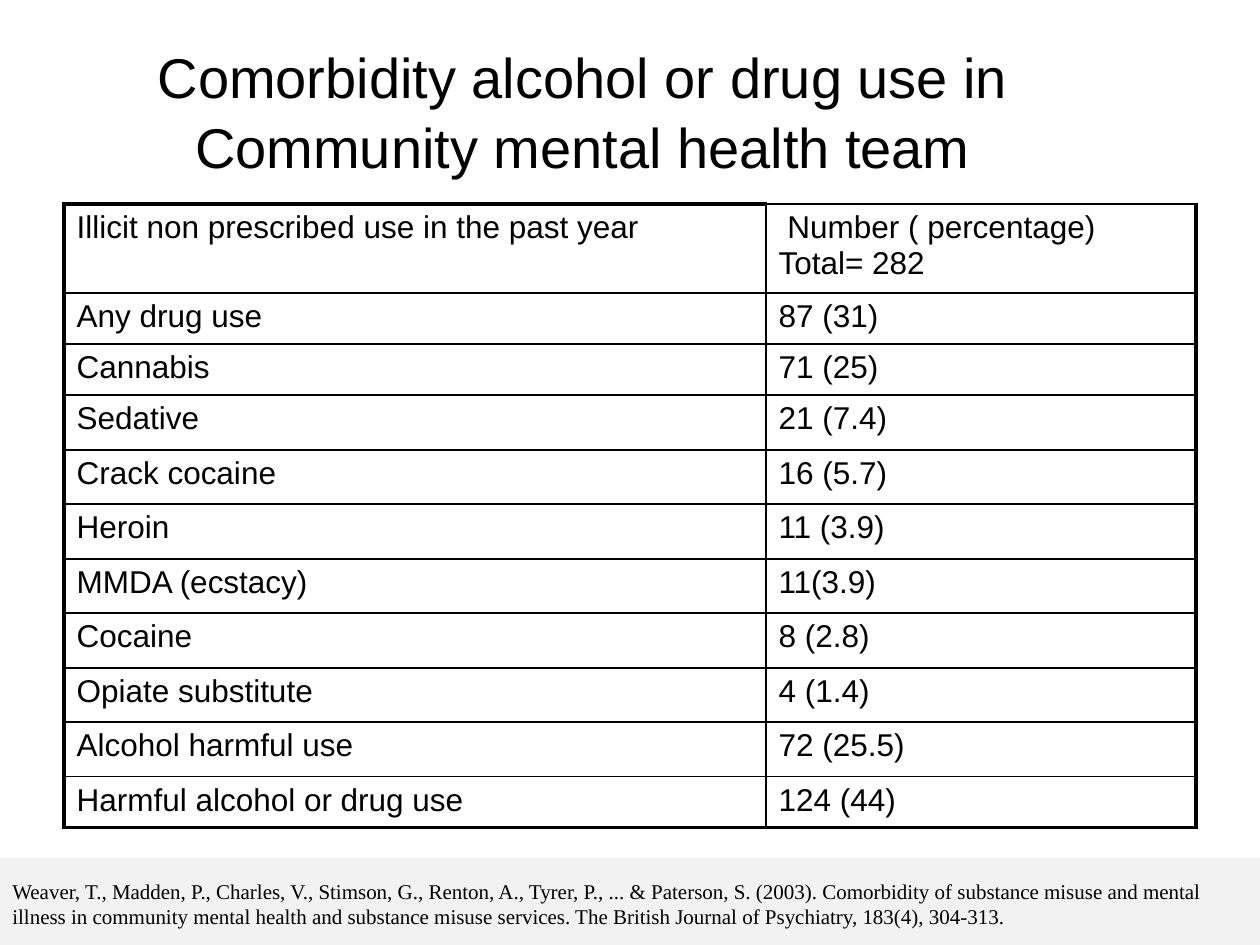
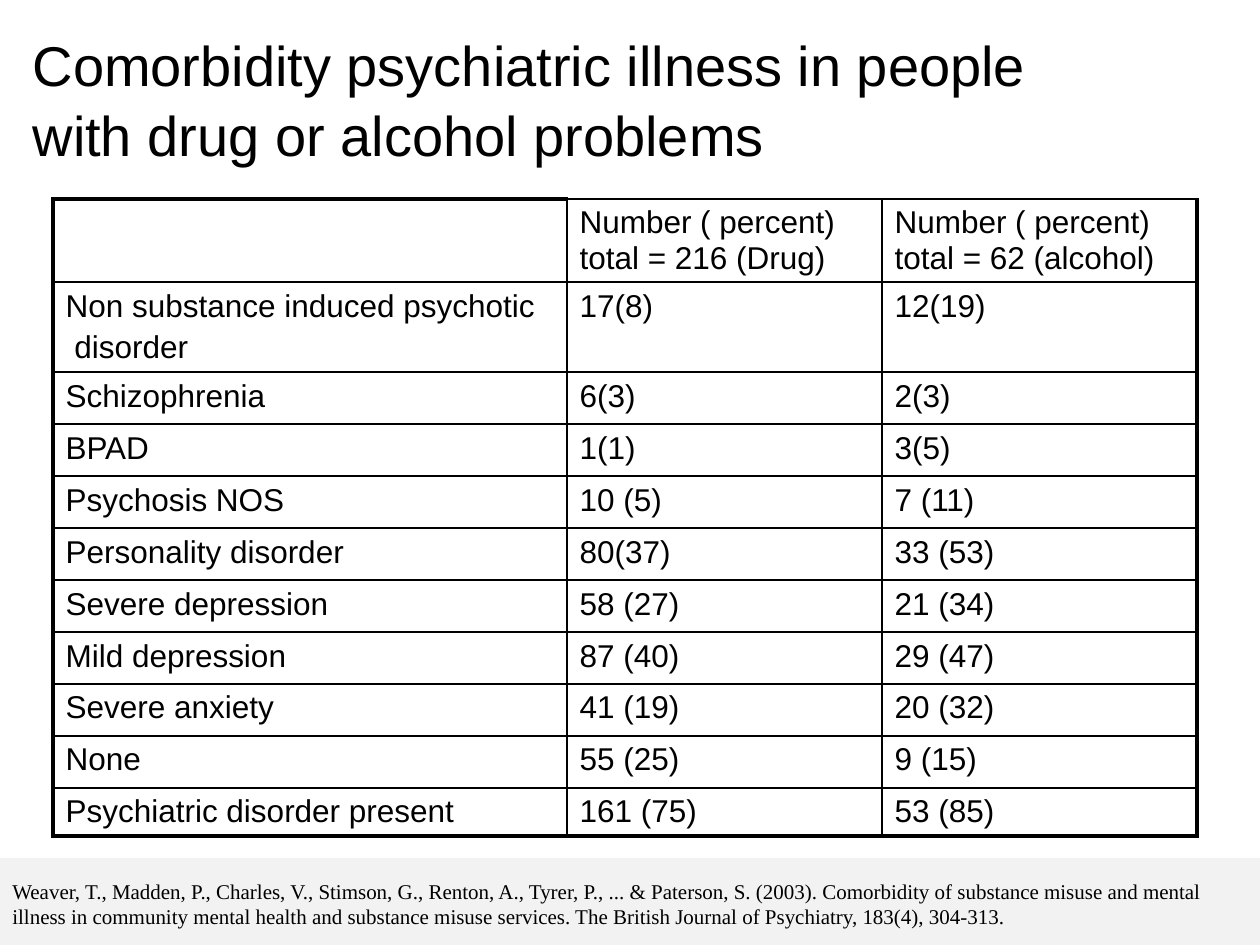
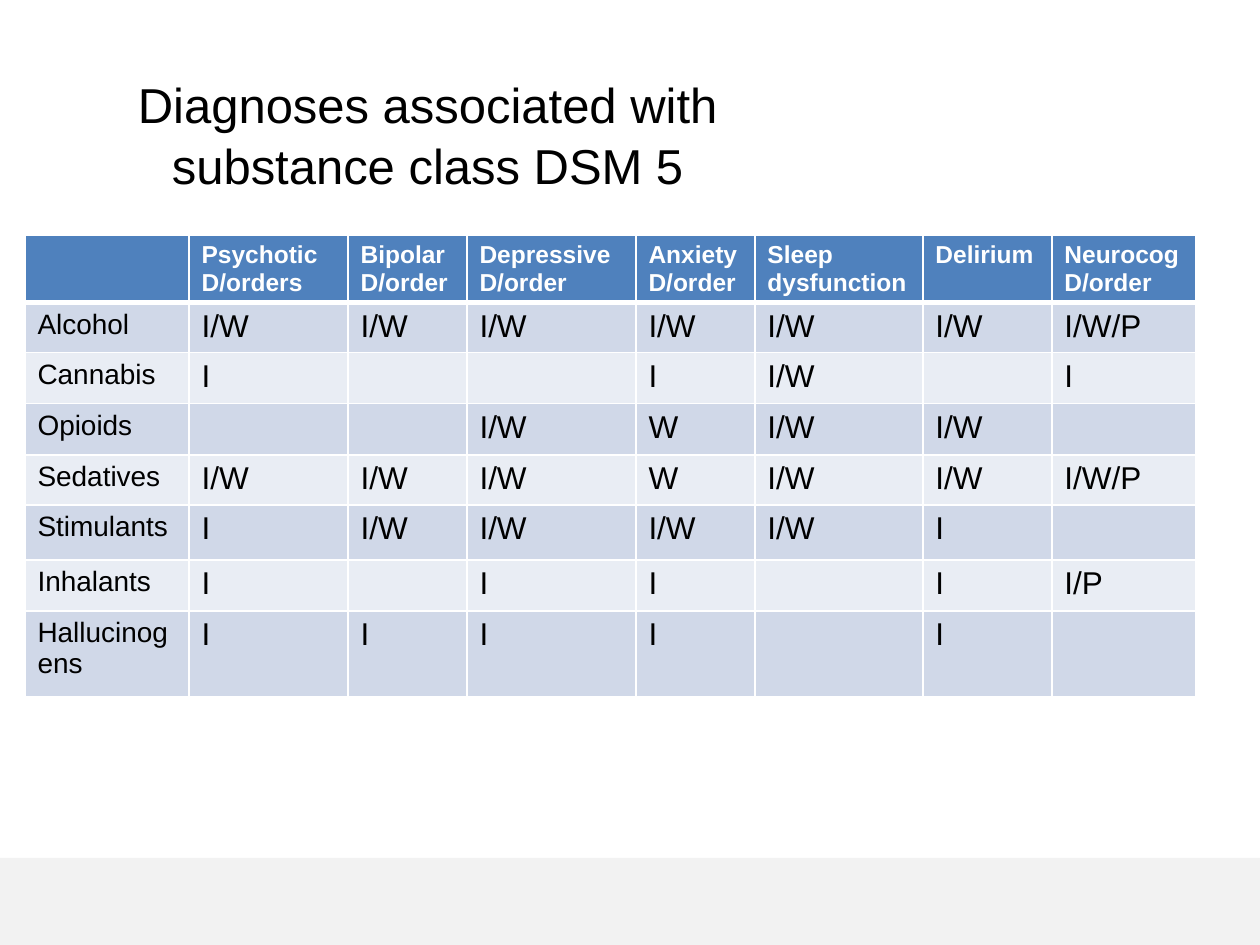
import pptx
import pptx.dml.color
import pptx.enum.shapes
import pptx.enum.text
import pptx.oxml
import pptx.oxml.ns
import pptx.util

ALIGN = pptx.enum.text.PP_ALIGN
ANCHOR = pptx.enum.text.MSO_ANCHOR

COLORS = {
    "black": "000000",
    "white": "FFFFFF",
    "band": "F2F2F2",
    "header": "4F81BD",
    "odd row": "D0D8E8",
    "even row": "E9EDF4",
}

CITATION = (
    "Weaver, T., Madden, P., Charles, V., Stimson, G., Renton, A., Tyrer, P., ... & Paterson, S. (2003). "
    "Comorbidity of substance misuse and mental illness in community mental health and substance misuse "
    "services. The British Journal of Psychiatry, 183(4), 304-313."
)

DRUG_USE = [
    ["Illicit non prescribed use in the past year", " Number ( percentage) Total= 282"],
    ["Any drug use", "87 (31)"],
    ["Cannabis", "71 (25)"],
    ["Sedative", "21 (7.4)"],
    ["Crack cocaine", "16 (5.7)"],
    ["Heroin", "11 (3.9)"],
    ["MMDA (ecstacy)", "11(3.9)"],
    ["Cocaine", "8 (2.8)"],
    ["Opiate substitute", "4 (1.4)"],
    ["Alcohol harmful use", "72 (25.5)"],
    ["Harmful alcohol or drug use", "124 (44)"],
]

PSYCHIATRIC_ILLNESS = [
    ["", "Number ( percent) total = 216 (Drug)", "Number ( percent) total = 62 (alcohol)"],
    ["Non substance induced psychotic\n disorder", "17(8)", "12(19)"],
    ["Schizophrenia", "6(3)", "2(3)"],
    ["BPAD", "1(1)", "3(5)"],
    ["Psychosis NOS", "10 (5)", "7 (11)"],
    ["Personality disorder", "80(37)", "33 (53)"],
    ["Severe depression", "58 (27)", "21 (34)"],
    ["Mild depression", "87 (40)", "29 (47)"],
    ["Severe anxiety", "41 (19)", "20 (32)"],
    ["None", "55 (25)", "9 (15)"],
    ["Psychiatric disorder present", "161 (75)", "53 (85)"],
]

DIAGNOSES = [
    ["", "Psychotic D/orders", "Bipolar D/order", "Depressive\nD/order", "Anxiety\nD/order",
     "Sleep\ndysfunction", "Delirium", "Neurocog\nD/order"],
    ["Alcohol", "I/W", "I/W", "I/W", "I/W", "I/W", "I/W", "I/W/P"],
    ["Cannabis", "I", "", "", "I", "I/W", "", "I"],
    ["Opioids", "", "", "I/W", "W", "I/W", "I/W", ""],
    ["Sedatives", "I/W", "I/W", "I/W", "W", "I/W", "I/W", "I/W/P"],
    ["Stimulants", "I", "I/W", "I/W", "I/W", "I/W", "I", ""],
    ["Inhalants", "I", "", "I", "I", "", "I", "I/P"],
    ["Hallucinogens", "I", "I", "I", "I", "", "I", ""],
]


def px(length):
    return pptx.util.Emu(round(length * 914400 / 126))


def rgb(name):
    return pptx.dml.color.RGBColor.from_string(COLORS[name])


def set_attributes(target, values):
    for name, value in values.items():
        setattr(target, name, value)


def ruled_style(row, column, last_row, last_column):
    """Thin black grid inside a thick frame; only the first cell has a thick top."""
    thick = {"L": column == 0, "R": column == last_column,
             "T": row == column == 0, "B": row == last_row}
    return {
        "borders": {side: 2.25 if is_thick else 1 for side, is_thick in thick.items()},
        "line": "black",
        "fill": None,
        "text": {"size": 18},
        "gap": 3.6,
    }


def banded_style(row, column, last_row, last_column):
    """Blue header above rows in two alternating tints, parted by white lines."""
    borders = {"L": 1, "R": 1, "T": 3 if row == 1 else 1, "B": 3 if row == 0 else 1}
    if row == 0:
        fill, text = "header", {"size": 14, "bold": True, "color": "white"}
    else:
        fill = "odd row" if row % 2 else "even row"
        text = {"size": 16 if column == 0 else 18}
    return {"borders": borders, "line": "white", "fill": fill, "text": text, "gap": 0}


class Deck:
    def __init__(self):
        self.presentation = pptx.Presentation()
        set_attributes(self.presentation, {"slide_width": px(1260), "slide_height": px(945)})
        self.slide = None

    def add_slide(self):
        self.slide = self.presentation.slides.add_slide(self.presentation.slide_layouts[5])
        band = self.slide.shapes.add_shape(
            pptx.enum.shapes.MSO_SHAPE.RECTANGLE, px(0), px(858), px(1260), px(87))
        band.shadow.inherit = False
        band.fill.solid()
        band.fill.fore_color.rgb = rgb("band")
        band.line.fill.background()

    def add_text(self, paragraph, text, size, name="Arial", bold=False, color="black"):
        run = paragraph.add_run()
        run.text = text
        set_attributes(run.font, {"size": pptx.util.Pt(size), "name": name, "bold": bold})
        run.font.color.rgb = rgb(color)

    def title(self, lines, left, top, width, height, size=32,
              alignment=ALIGN.CENTER, anchor=ANCHOR.MIDDLE):
        title = self.slide.shapes.title
        set_attributes(title, {"left": px(left), "top": px(top),
                               "width": px(width), "height": px(height)})
        set_attributes(title.text_frame, {
            "word_wrap": True, "vertical_anchor": anchor,
            "auto_size": pptx.enum.text.MSO_AUTO_SIZE.NONE})
        paragraph = title.text_frame.paragraphs[0]
        set_attributes(paragraph, {"alignment": alignment, "line_spacing": 1.04})
        for index, line in enumerate(lines):
            if index:
                paragraph.add_line_break()
            self.add_text(paragraph, line, size)

    def citation(self):
        box = self.slide.shapes.add_textbox(px(0), px(872), px(1245), px(63))
        box.text_frame.word_wrap = True
        self.add_text(box.text_frame.paragraphs[0], CITATION, 12, "Times New Roman")

    def table(self, left, top, widths, heights, content, style):
        frame = self.slide.shapes.add_table(
            len(heights), len(widths), px(left), px(top), px(sum(widths)), px(sum(heights)))
        table = frame.table
        set_attributes(table, {"first_row": False, "horz_banding": False})
        for column, width in zip(table.columns, widths):
            column.width = px(width)
        for row, height in zip(table.rows, heights):
            row.height = px(height)
        for row, texts in enumerate(content):
            for column, text in enumerate(texts):
                look = style(row, column, len(heights) - 1, len(widths) - 1)
                self.fill_cell(table.cell(row, column), text, look)

    def fill_cell(self, cell, text, look):
        self.draw_borders(cell, look["borders"], look["line"])
        if look["fill"]:
            cell.fill.solid()
            cell.fill.fore_color.rgb = rgb(look["fill"])
        else:
            cell.fill.background()
        if not text:
            return
        for index, line in enumerate(text.split("\n")):
            if index:
                paragraph = cell.text_frame.add_paragraph()
                paragraph.space_before = pptx.util.Pt(look["gap"])
            else:
                paragraph = cell.text_frame.paragraphs[0]
            self.add_text(paragraph, line, **look["text"])

    def draw_borders(self, cell, borders, color):
        properties = cell._tc.get_or_add_tcPr()
        for side, points in borders.items():
            properties.append(pptx.oxml.parse_xml(
                f'<a:ln{side} {pptx.oxml.ns.nsdecls("a")} w="{pptx.util.Pt(points)}">'
                f'<a:solidFill><a:srgbClr val="{COLORS[color]}"/></a:solidFill></a:ln{side}>'))


def main():
    deck = Deck()

    deck.add_slide()
    deck.title(["Comorbidity alcohol or drug use in Community mental health team"], 0, 31, 1166, 158)
    deck.table(64, 204, [702, 430], [89, 51, 51] + [55, 54] * 3 + [55, 51], DRUG_USE, ruled_style)
    deck.citation()

    deck.add_slide()
    deck.title(["Comorbidity psychiatric illness in people ", "with drug or alcohol problems"],
               20, 19, 1207, 158, alignment=ALIGN.LEFT)
    deck.table(53, 199, [514, 315, 315], [83, 90] + [52] * 8 + [48], PSYCHIATRIC_ILLNESS, ruled_style)
    deck.citation()

    deck.add_slide()
    deck.title(["Diagnoses associated with substance class DSM 5"], 25, 66, 805, 110,
               size=28, anchor=ANCHOR.TOP)
    deck.table(25, 235, [164, 159, 119, 169, 119, 168, 129, 144],
               [66] + [50] * 4 + [55, 50, 86], DIAGNOSES, banded_style)

    deck.presentation.save("out.pptx")


if __name__ == "__main__":
    main()
